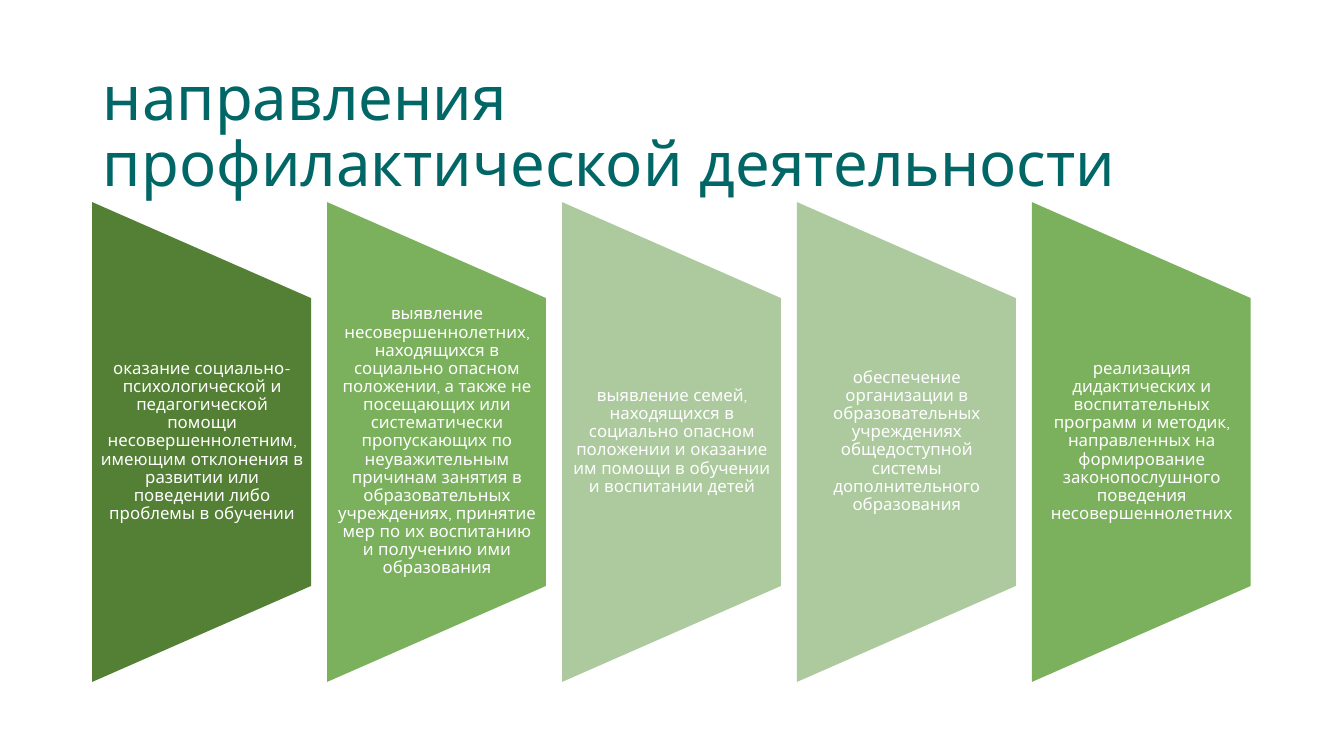
"""Build the slide on the directions of preventive work."""
from pptx import Presentation
from pptx.dml.color import RGBColor
from pptx.enum.shapes import MSO_SHAPE as Preset
from pptx.enum.text import MSO_ANCHOR as Anchor, MSO_AUTO_SIZE as AutoSize, PP_ALIGN as Align
from pptx.util import Emu, Pt

PX = 9144
FONT = "Quicksand"
TEAL = RGBColor(0x00, 0x66, 0x66)
WHITE = RGBColor(0xFF, 0xFF, 0xFF)
DARK_GREEN = RGBColor(0x53, 0x80, 0x35)
GREEN = RGBColor(0x7B, 0xB1, 0x5D)
PALE_GREEN = RGBColor(0xAC, 0xCA, 0x9E)

TITLE = "направления \vпрофилактической деятельности"
DIRECTIONS = [
    (DARK_GREEN, "оказание социально-психологической и педагогической помощи "
     "несовершеннолетним, имеющим отклонения в развитии или поведении либо "
     "проблемы в обучении"),
    (GREEN, "выявление несовершеннолетних, находящихся в социально опасном "
     "положении, а также не посещающих или систематически пропускающих по "
     "неуважительным причинам занятия в образовательных учреждениях, принятие "
     "мер по их воспитанию и получению ими образования"),
    (PALE_GREEN, "выявление семей, находящихся в социально опасном положении "
     "и оказание им помощи в обучении и воспитании детей"),
    (PALE_GREEN, "обеспечение организации в образовательных учреждениях "
     "общедоступной системы дополнительного образования"),
    (GREEN, "реализация дидактических и воспитательных программ и методик, "
     "направленных на формирование законопослушного поведения "
     "несовершеннолетних"),
]

LEFT, STEP, WIDTH = 92, 233, 217
MIDDLE, PANEL_LENGTH, TEXT_HEIGHT = 438, 476, 286


def px(*lengths):
    """Turn px lengths into EMU."""
    return [Emu(length * PX) for length in lengths]


def write(frame, text, size, color, align):
    """Fill a text frame with one formatted paragraph."""
    frame.text = text
    frame.word_wrap = True
    frame.auto_size = AutoSize.NONE
    frame.vertical_anchor = Anchor.MIDDLE
    para = frame.paragraphs[0]
    para.alignment = align
    para.line_spacing = 0.9
    for span in para.runs:
        span.font.name = FONT
        span.font.size = Pt(size)
        span.font.color.rgb = color


def add_title(page):
    """Place and fill the title placeholder."""
    title = page.shapes.title
    title.left, title.top, title.width, title.height = px(92, 40, 1150, 185)
    write(title.text_frame, TITLE, 44, TEAL, Align.LEFT)


def add_panel(page, left, color):
    """Draw a trapezoid whose wide side faces left."""
    panel = page.shapes.add_shape(
        Preset.FLOWCHART_MANUAL_OPERATION,
        *px(left + (WIDTH - PANEL_LENGTH) // 2, MIDDLE - WIDTH // 2, PANEL_LENGTH, WIDTH))
    panel.rotation = 270
    panel.shadow.inherit = False
    panel.fill.solid()
    panel.fill.fore_color.rgb = color
    panel.line.fill.background()


def add_caption(page, left, text):
    """Put the centred text over a panel."""
    box = page.shapes.add_textbox(*px(left, MIDDLE - TEXT_HEIGHT // 2, WIDTH, TEXT_HEIGHT))
    frame = box.text_frame
    frame.margin_left, frame.margin_right, frame.margin_top, frame.margin_bottom = px(8, 8, 0, 0)
    write(frame, text, 12, WHITE, Align.CENTER)


def main():
    """Build and save the deck."""
    deck = Presentation()
    deck.slide_width, deck.slide_height = px(1333, 750)
    page = deck.slides.add_slide(deck.slide_layouts[5])
    add_title(page)
    for index, (color, text) in enumerate(DIRECTIONS):
        left = LEFT + index * STEP
        add_panel(page, left, color)
        add_caption(page, left, text)
    deck.save("out.pptx")


if __name__ == "__main__":
    main()
